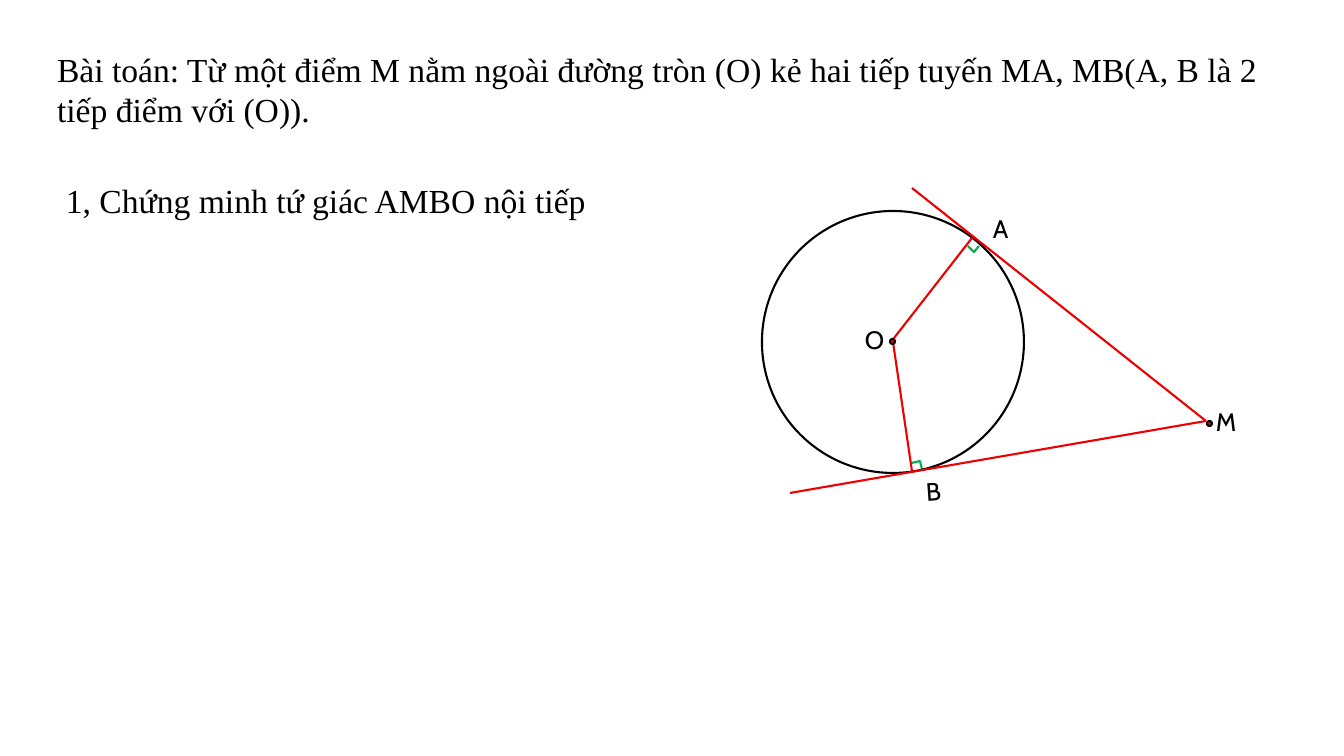
"""Builds a geometry slide: two tangents from M to circle (O)."""
from pptx import Presentation, util as u
from pptx.dml.color import RGBColor
from pptx.enum import shapes, text
from pptx.oxml.ns import qn
from lxml import etree

PX = 914400 / 100.8
BLACK, RED, GREEN = "000000", "EE0000", "00B050"
SERIF, SANS = "Times New Roman", "Cabin"


def paint(color_format, value):
    color_format.rgb = RGBColor.from_string(value)


def write(box, words, font, size):
    frame = box.text_frame
    frame.text = words
    frame.word_wrap = True
    frame.auto_size = text.MSO_AUTO_SIZE.NONE
    frame.vertical_anchor = text.MSO_ANCHOR.TOP
    line = frame.paragraphs[0]
    line.alignment = text.PP_ALIGN.LEFT
    line.font.name, line.font.size = font, u.Pt(size)
    paint(line.font.color, BLACK)


def px(*lengths):
    return [round(length * PX) for length in lengths]


prs = Presentation()
prs.slide_width, prs.slide_height = px(1344, 756)
slide = prs.slides.add_slide(prs.slide_layouts[5])
parts = slide.shapes

right_angles = [
    [(922, 469), (920, 461), (912, 463)],
    [(968, 246), (974, 252), (979, 246)],
]
for corner in right_angles:
    builder = parts.build_freeform(*corner[0], scale=PX)
    builder.add_line_segments(corner[1:], close=False)
    mark = builder.convert_to_shape()
    mark.shadow.inherit = False
    mark.fill.background()
    paint(mark.line.color, GREEN)
    mark.line.width = u.Pt(1.5)

circle = parts.add_shape(shapes.MSO_SHAPE.OVAL, *px(762, 211, 262, 262))
circle.fill.background()

segments = [
    (891, 342, 972, 238),
    (893, 342, 912, 471),
    (790, 493, 1206, 421),
    (912, 188, 1206, 421),
]
for ends in segments:
    segment = parts.add_connector(shapes.MSO_CONNECTOR.STRAIGHT, *px(*ends))
    paint(segment.line.color, RED)
    segment.line.width = u.Pt(1.5)
    etree.SubElement(segment._element.spPr, qn("a:effectLst"))

point_o, point_m = [
    parts.add_shape(shapes.MSO_SHAPE.OVAL, *px(left, top, 5, 5))
    for left, top in [(890, 339), (1207, 421)]
]
for point in (point_o, point_m):
    point.fill.solid()
    paint(point.fill.fore_color, RED)
for outline in (circle, point_o, point_m):
    outline.shadow.inherit = False
    paint(outline.line.color, BLACK)
    outline.line.width = u.Pt(1.5)

labels = [("O", 855, 319, 0), ("A", 983, 208, 0),
          ("B", 916, 471, -4.1), ("M", 1206, 401, 0)]
for letter, left, top, angle in labels:
    label = parts.add_textbox(*px(left, top, 37, 40))
    label.rotation = angle
    write(label, letter, SANS, 18)

question = parts.add_textbox(*px(56, 175, 543, 50))
write(question, "1, Chứng minh tứ giác AMBO nội tiếp", SERIF, 24)

problem = parts.title
problem.left, problem.top, problem.width, problem.height = px(47, 44, 1221, 92)
write(problem, "Bài toán: Từ một điểm M nằm ngoài đường tròn (O) kẻ hai tiếp tuyến "
      "MA, MB(A, B là 2 tiếp điểm với (O)).", SERIF, 24)

prs.save("out.pptx")
